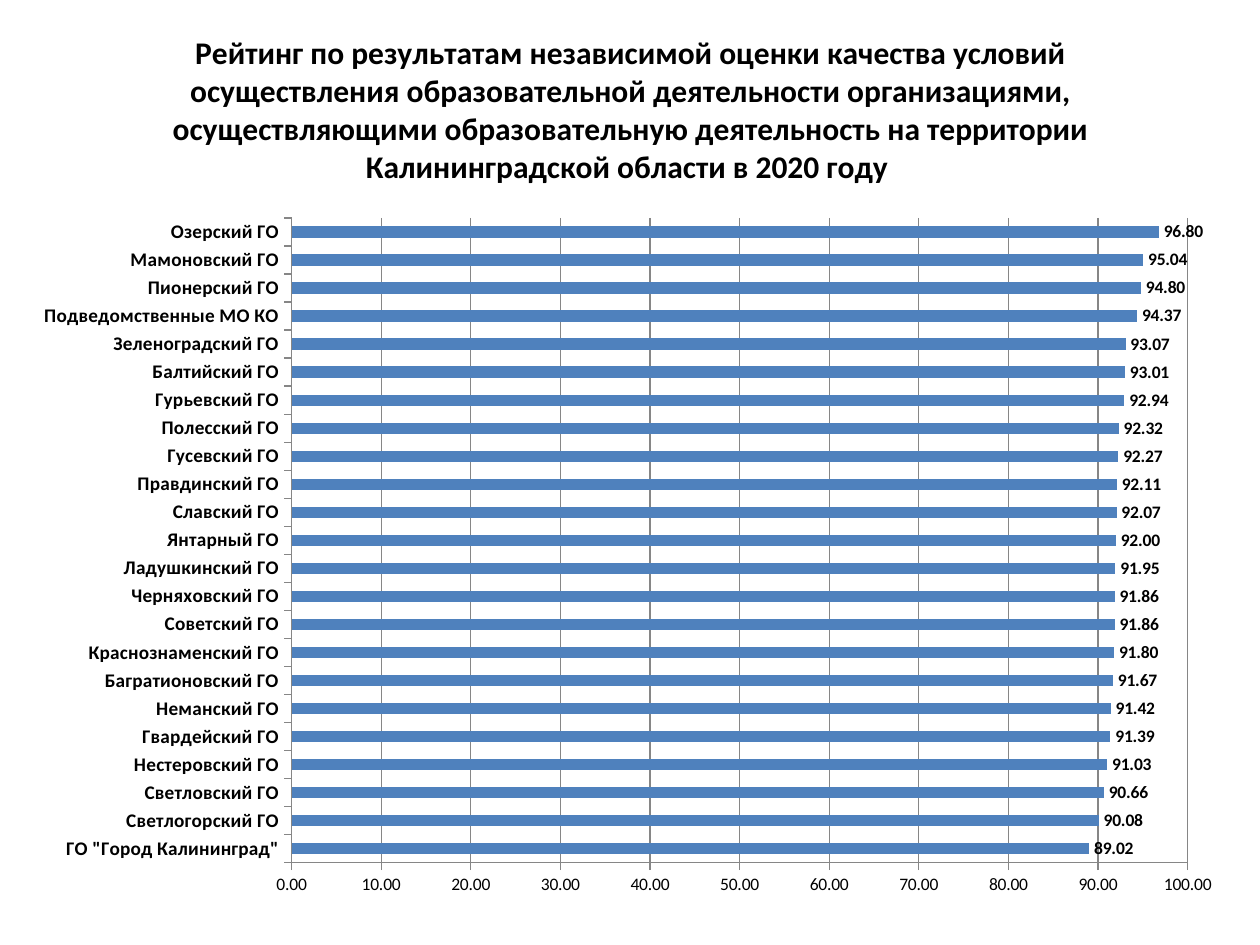
"""Build a slide with a bar chart rating the municipalities of the Kaliningrad region."""
import lxml.etree
import pptx
import pptx.chart.data
import pptx.dml.color
import pptx.enum.chart
import pptx.oxml.ns
import pptx.util

Pt = pptx.util.Pt
qn = pptx.oxml.ns.qn

HEADING = (
    "Рейтинг по результатам независимой оценки качества условий "
    "осуществления образовательной деятельности организациями, "
    "осуществляющими образовательную деятельность на территории "
    "Калининградской области в 2020 году "
)
RATINGS = [
    ('ГО "Город Калининград"', 89.02),
    ("Светлогорский ГО", 90.08),
    ("Светловский ГО", 90.66),
    ("Нестеровский ГО", 91.03),
    ("Гвардейский ГО", 91.39),
    ("Неманский ГО", 91.42),
    ("Багратионовский ГО", 91.67),
    ("Краснознаменский ГО", 91.8),
    ("Советский ГО", 91.86),
    ("Черняховский ГО", 91.86),
    ("Ладушкинский ГО", 91.95),
    ("Янтарный ГО", 92),
    ("Славский ГО", 92.07),
    ("Правдинский ГО", 92.11),
    ("Гусевский ГО", 92.27),
    ("Полесский ГО", 92.32),
    ("Гурьевский ГО", 92.94),
    ("Балтийский ГО", 93.01),
    ("Зеленоградский ГО", 93.07),
    ("Подведомственные МО КО", 94.37),
    ("Пионерский ГО", 94.8),
    ("Мамоновский ГО", 95.04),
    ("Озерский ГО", 96.8),
]
PLOT_LAYOUT = {
    "layoutTarget": "inner", "xMode": "edge", "yMode": "edge",
    "x": 0.22, "y": 0.24, "w": 0.74, "h": 0.71,
}
BLACK, GREY, BLUE = "000000", "868686", "4F81BD"


def color(hex_string):
    return pptx.dml.color.RGBColor.from_string(hex_string)


def set_font(font, size, bold):
    font.name, font.size, font.bold = "Calibri", Pt(size), bold
    font.color.rgb = color(BLACK)


def set_line(line):
    line.color.rgb = color(GREY)
    line.width = Pt(0.75)


def place_plot(chart):
    plot_area = chart.element.find(".//" + qn("c:plotArea"))
    for old_layout in plot_area.findall(qn("c:layout")):
        plot_area.remove(old_layout)
    layout = lxml.etree.Element(qn("c:layout"))
    manual = lxml.etree.SubElement(layout, qn("c:manualLayout"))
    for tag, value in PLOT_LAYOUT.items():
        lxml.etree.SubElement(manual, qn("c:" + tag)).set("val", str(value))
    plot_area.insert(0, layout)


def add_rating(slide):
    data = pptx.chart.data.CategoryChartData(number_format="0.00")
    data.categories = [municipality for municipality, score in RATINGS]
    data.add_series("Series 1", [score for municipality, score in RATINGS])
    chart = slide.shapes.add_chart(
        pptx.enum.chart.XL_CHART_TYPE.BAR_CLUSTERED,
        Pt(14.4), Pt(0), Pt(692), Pt(519), data).chart
    set_font(chart.font, 10, False)
    chart.has_legend = False
    chart.has_title = True
    chart.chart_title.include_in_layout = False
    heading = chart.chart_title.text_frame.paragraphs[0]
    heading.text = HEADING
    set_font(heading.font, 18, True)
    place_plot(chart)

    municipalities, scores = chart.category_axis, chart.value_axis
    for axis in (municipalities, scores):
        axis.major_tick_mark = pptx.enum.chart.XL_TICK_MARK.OUTSIDE
        set_line(axis.format.line)
    set_font(municipalities.tick_labels.font, 11, True)
    set_font(scores.tick_labels.font, 10, False)
    scores.minimum_scale, scores.maximum_scale, scores.major_unit = 0, 100, 10
    scores.tick_labels.number_format = "0.00"
    scores.tick_labels.number_format_is_linked = False
    scores.has_major_gridlines = True
    set_line(scores.major_gridlines.format.line)

    plot = chart.plots[0]
    plot.gap_width = 150
    plot.vary_by_categories = False
    bars = plot.series[0]
    bars.format.fill.solid()
    bars.format.fill.fore_color.rgb = color(BLUE)
    labels = bars.data_labels
    labels.show_value = True
    labels.number_format = "0.00"
    labels.number_format_is_linked = False
    labels.position = pptx.enum.chart.XL_LABEL_POSITION.OUTSIDE_END
    set_font(labels.font, 10, True)


def main():
    deck = pptx.Presentation()
    deck.slide_width, deck.slide_height = Pt(720), Pt(540)
    add_rating(deck.slides.add_slide(deck.slide_layouts[6]))
    deck.save("out.pptx")


if __name__ == "__main__":
    main()
